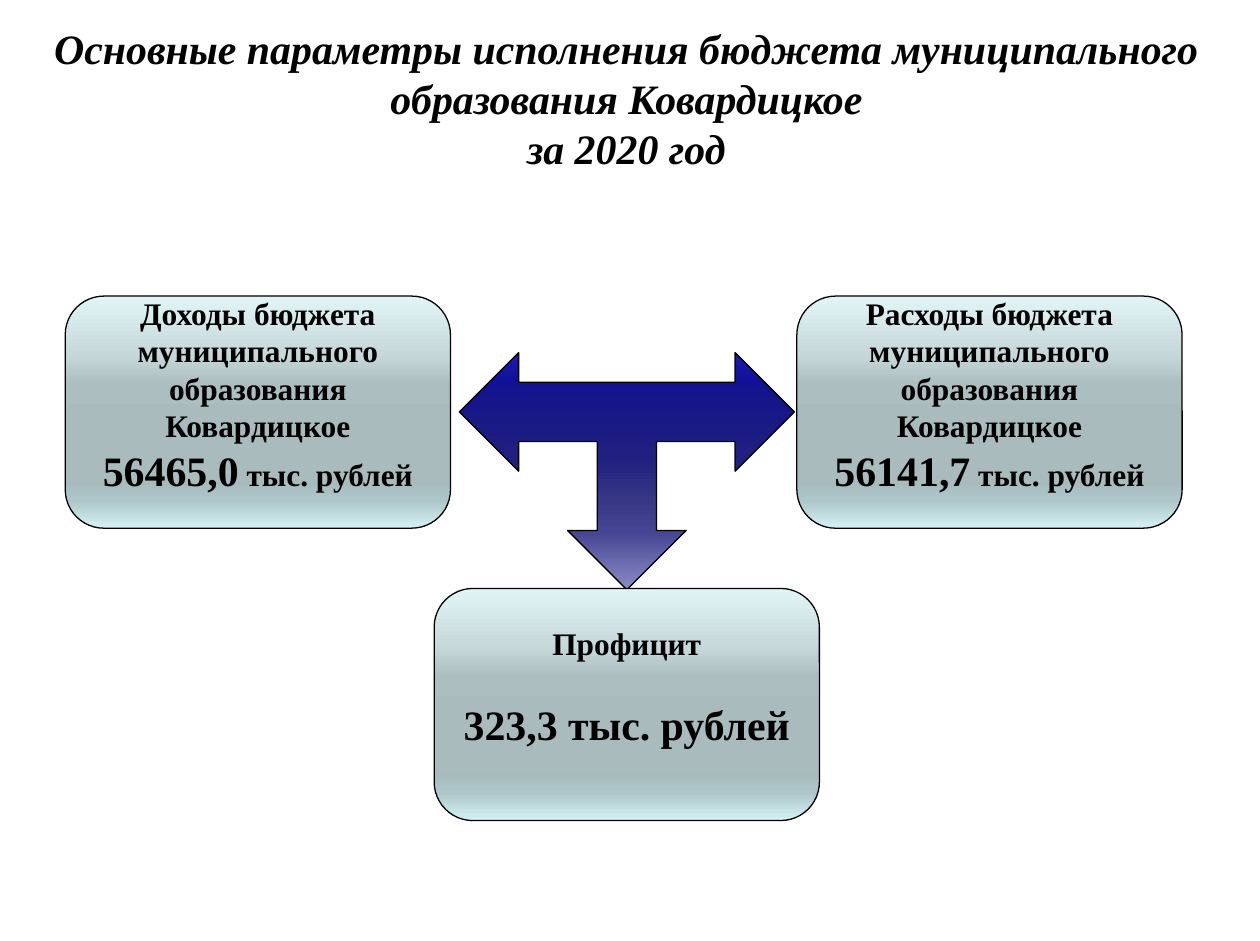
from copy import deepcopy
from dataclasses import dataclass

from pptx import Presentation
from pptx.dml.color import RGBColor
from pptx.enum.shapes import MSO_SHAPE
from pptx.enum.text import MSO_ANCHOR, PP_ALIGN
from pptx.util import Inches, Pt


@dataclass(frozen=True)
class Theme:
    font: str = "Times New Roman"
    ink: str = "000000"
    big: int = 24
    small: int = 18
    line: float = 0.75
    gap: float = 20.7  # height of one small line, in points
    stops: tuple = (0, 25, 38, 55, 80, 88, 100)
    steel: tuple = ("E1F5F7", "C7D8DA", "ADBEC0", "A9BBBD",
                    "A6BBBD", "ADC6C9", "D4F2F5")
    navy: tuple = ("8B8BC6", "444492", "373785", "202080",
                   "161689", "111196", "1C1CB5")


THEME = Theme()


def shade(fill, colors):
    """Fill from top to bottom with one colour per theme stop."""
    fill.gradient()
    fill.gradient_angle = 270
    first, last = fill.gradient_stops
    stops = first._gs.getparent()
    for _ in colors[2:]:
        stops.append(deepcopy(last._gs))
    for stop, place, color in zip(fill.gradient_stops, THEME.stops, colors):
        stop.position = place / 100
        stop.color.rgb = RGBColor.from_string(color)


def add_form(slide, kind, box, colors):
    form = slide.shapes.add_shape(kind, *map(Inches, box))
    form.shadow.inherit = False
    shade(form.fill, colors)
    form.line.color.rgb = RGBColor.from_string(THEME.ink)
    form.line.width = Pt(THEME.line)
    return form


def write(frame, lines, italic=False):
    """Each line is a list of (text, size) runs."""
    for i, runs in enumerate(lines):
        para = frame.paragraphs[0] if i == 0 else frame.add_paragraph()
        para.alignment = PP_ALIGN.CENTER
        font = para.font
        font.name, font.bold, font.italic = THEME.font, True, italic
        font.color.rgb = RGBColor.from_string(THEME.ink)
        font.size = Pt(runs[0][1])
        for text, size in runs:
            run = para.add_run()
            run.text = text
            if size != runs[0][1]:
                run.font.size = Pt(size)


def add_title(slide, box, lines):
    frame = slide.shapes.add_textbox(*map(Inches, box)).text_frame
    frame.word_wrap = True
    write(frame, [[(line, THEME.big)] for line in lines], italic=True)


def add_card(slide, box, lines):
    card = add_form(slide, MSO_SHAPE.ROUNDED_RECTANGLE, box, THEME.steel)
    frame = card.text_frame
    frame.word_wrap = False
    frame.vertical_anchor = MSO_ANCHOR.MIDDLE
    frame.margin_top = 0
    frame.margin_bottom = Pt(THEME.gap)  # lifts the text by half a line
    write(frame, lines)
    return frame


def add_budget(slide, box, name, total):
    small = THEME.small
    words = (f"{name} бюджета", "муниципального", "образования", "Ковардицкое")
    lines = [[(word, small)] for word in words]
    lines.append([(total, THEME.big), (" тыс. рублей", small)])
    add_card(slide, box, lines)


def add_profit(slide, box):
    frame = add_card(slide, box, [[("Профицит", THEME.small)],
                                  [("323,3 тыс. рублей", THEME.big)]])
    frame.paragraphs[1].space_before = Pt(THEME.gap)


def add_arrow(slide, box):
    arrow = add_form(slide, MSO_SHAPE.LEFT_RIGHT_UP_ARROW, box, THEME.navy)
    arrow.rotation = 180


def main():
    deck = Presentation()
    deck.slide_width, deck.slide_height = Inches(10.04), Inches(7.5)
    slide = deck.slides.add_slide(deck.slide_layouts[6])

    # Heading
    add_title(slide, (-0.03, 0.13, 10.04, 1.31), (
        "Основные параметры исполнения бюджета муниципального "
        "образования Ковардицкое",
        "за 2020 год"))

    # Spending and income, joined to the surplus by the arrow
    wide, high, top = 3.07, 1.85, 2.36
    add_budget(slide, (6.35, top, wide, high), "Расходы", "56141,7")
    add_arrow(slide, (3.66, 2.81, 2.67, 1.89))
    add_budget(slide, (0.52, top, wide, high), "Доходы", "56465,0")
    add_profit(slide, (3.46, 4.69, wide, high))

    deck.save("out.pptx")


if __name__ == "__main__":
    main()
